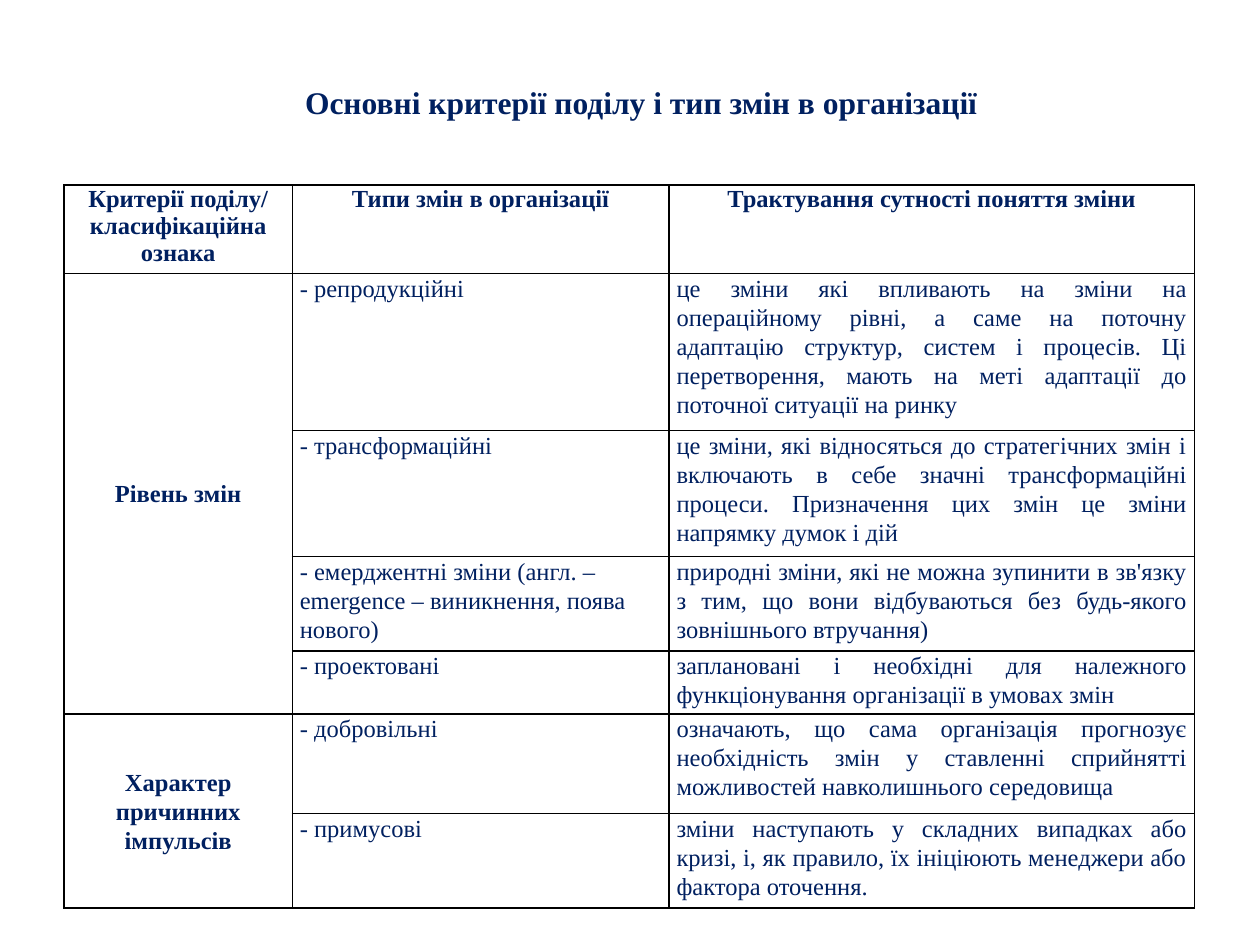
from dataclasses import dataclass

from lxml.etree import SubElement
from pptx import Presentation
from pptx.dml.color import RGBColor
from pptx.enum.text import MSO_ANCHOR as Anchor, MSO_AUTO_SIZE as AutoSize, PP_ALIGN as Align
from pptx.oxml.ns import qn
from pptx.util import Inches, Pt


@dataclass(frozen=True)
class Theme:
    font: str = "Times New Roman"
    ink: RGBColor = RGBColor(0x00, 0x20, 0x60)
    border: str = "000000"
    border_width: int = Pt(1)
    title_size: int = Pt(18)
    table_size: int = Pt(14)


THEME = Theme()
TITLE = "Основні критерії поділу і тип змін в організації"
HEADINGS = [
    "Критерії поділу/ класифікаційна ознака",
    "Типи змін в організації",
    "Трактування сутності поняття зміни",
]
# Each criterion holds its types: (row height, type, meaning)
CRITERIA = [
    ("Рівень змін", [
        (1.23, "- репродукційні",
         "це зміни які впливають на зміни на операційному рівні, а саме на поточну адаптацію "
         "структур, систем і процесів. Ці перетворення, мають на меті адаптації до поточної "
         "ситуації на ринку"),
        (0.98, "- трансформаційні",
         "це зміни, які відносяться до стратегічних змін і включають в себе значні "
         "трансформаційні процеси. Призначення цих змін це зміни напрямку думок і дій"),
        (0.73, "- емерджентні зміни (англ. – emergence – виникнення, поява нового)",
         "природні зміни, які не можна зупинити в зв'язку з тим, що вони відбуваються без "
         "будь-якого зовнішнього втручання)"),
        (0.48, "- проектовані",
         "заплановані і необхідні для належного функціонування організації в умовах змін"),
    ]),
    ("Характер причинних імпульсів", [
        (0.79, "- добровільні",
         "означають, що сама організація прогнозує необхідність змін у ставленні сприйнятті "
         "можливостей навколишнього середовища"),
        (0.73, "- примусові",
         "зміни наступають у складних випадках або кризі, і, як правило, їх ініціюють менеджери "
         "або фактора оточення."),
    ]),
]
COLUMN_WIDTHS = [1.81, 2.99, 4.17]


def style_paragraph(paragraph, size, align, bold):
    paragraph.alignment = align
    font = paragraph.font
    font.name, font.size, font.bold = THEME.font, size, bold
    font.color.rgb = THEME.ink


def add_borders(cell):
    properties = cell._tc.get_or_add_tcPr()
    for side in ("a:lnL", "a:lnR", "a:lnT", "a:lnB"):
        line = SubElement(properties, qn(side), w=str(THEME.border_width))
        fill = SubElement(line, qn("a:solidFill"))
        SubElement(fill, qn("a:srgbClr"), val=THEME.border)


def add_grid(slide, left, top, width, row_heights, inset):
    """Bordered, unfilled table in the shared columns."""
    frame = slide.shapes.add_table(len(row_heights), len(COLUMN_WIDTHS), left, top,
                                   width, Inches(sum(row_heights)))
    table = frame.table
    table.first_row = table.horz_banding = False
    for column, column_width in zip(table.columns, COLUMN_WIDTHS):
        column.width = Inches(column_width)
    for row, height in zip(table.rows, row_heights):
        row.height = Inches(height)
    for cell in table.iter_cells():
        add_borders(cell)
        cell.fill.background()
        cell.margin_left = cell.margin_right = inset
        cell.margin_top = cell.margin_bottom = 0
    return table


def write_cell(cell, text, align, bold=False):
    cell.text = text
    paragraph = cell.text_frame.paragraphs[0]
    style_paragraph(paragraph, THEME.table_size, align, bold)
    return paragraph


def add_title(slide, left, top, width, height):
    text_box = slide.shapes.add_textbox(left, top, width, height)
    text_frame = text_box.text_frame
    text_frame.word_wrap = True
    text_frame.auto_size = AutoSize.SHAPE_TO_FIT_TEXT
    paragraph = text_frame.paragraphs[0]
    paragraph.text = TITLE
    style_paragraph(paragraph, THEME.title_size, Align.CENTER, True)
    paragraph._p.get_or_add_pPr().set("indent", str(Inches(0.49)))


def add_heading_table(slide, left, top, width, height):
    table = add_grid(slide, left, top, width, [height.inches], Inches(0.07))
    for cell, heading in zip(table.rows[0].cells, HEADINGS):
        write_cell(cell, heading, Align.CENTER, bold=True)


def add_criteria_table(slide, left, top, width):
    heights = [height for _, types in CRITERIA for height, _, _ in types]
    table = add_grid(slide, left, top, width, heights, Inches(0.06))
    first = 0
    for criterion, types in CRITERIA:
        # Criterion cell spans all its types
        criterion_cell = table.cell(first, 0)
        criterion_cell.merge(table.cell(first + len(types) - 1, 0))
        criterion_cell.vertical_anchor = Anchor.MIDDLE
        paragraphs = [write_cell(criterion_cell, criterion, Align.CENTER, bold=True)]
        for row, (_, kind, meaning) in enumerate(types, first):
            paragraphs.append(write_cell(table.cell(row, 1), kind, Align.LEFT))
            paragraphs.append(write_cell(table.cell(row, 2), meaning, Align.JUSTIFY))
        for paragraph in paragraphs:
            paragraph.line_spacing = 1.07
            paragraph.space_after = Pt(8)
        first += len(types)


def main():
    presentation = Presentation()
    presentation.slide_width, presentation.slide_height = Inches(10), Inches(7.5)
    slide = presentation.slides.add_slide(presentation.slide_layouts[6])
    left, top, width, heading_height = Inches(0.51), Inches(1.47), Inches(8.98), Inches(0.7)

    add_title(slide, Inches(1.38), Inches(0.61), Inches(6.93), Inches(0.4))
    add_criteria_table(slide, left, top + heading_height, width)
    add_heading_table(slide, left, top, width, heading_height)
    presentation.save("out.pptx")


if __name__ == "__main__":
    main()
